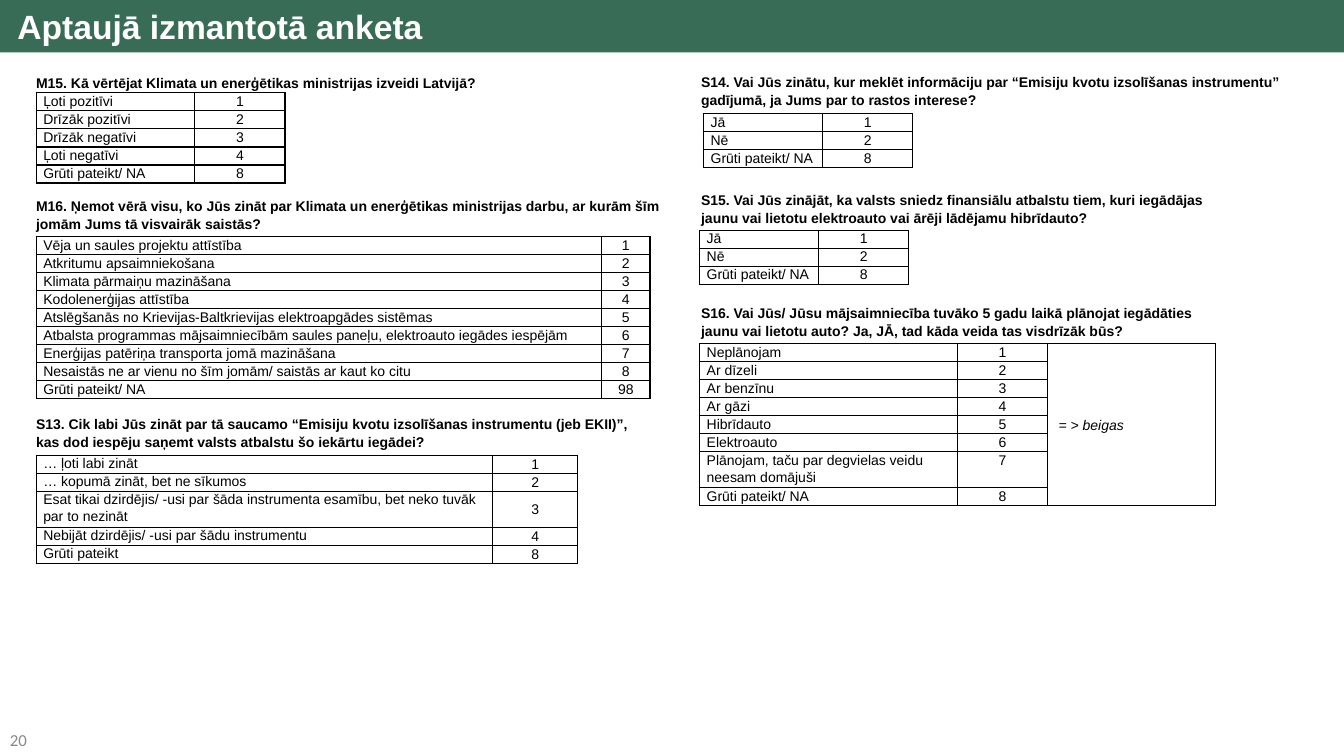
import pptx
import pptx.dml.color
import pptx.enum.shapes
import pptx.enum.text
import pptx.oxml
import pptx.oxml.ns
import pptx.util
from dataclasses import dataclass

Cm = pptx.util.Cm
ALIGN = pptx.enum.text.PP_ALIGN
ANCHOR = pptx.enum.text.MSO_ANCHOR


@dataclass(frozen=True)
class Theme:
    band: str = "386C57"
    white: str = "FFFFFF"
    ink: str = "000000"
    grey: str = "898989"
    title_size: int = 24
    number_size: int = 12
    body_size: int = 10
    font: str = "Arial"
    number_font: str = "Calibri"
    line_spacing: float = 1.07
    border: float = 1
    row_height: float = 0.45
    cell_inset: float = 0.18


THEME = Theme()
HARD_TO_SAY = "Grūti pateikt/ NA"
YES_NO = [("Jā", 1), ("Nē", 2), (HARD_TO_SAY, 8)]

# Each question: text, box (left, top, width), table (left, top), columns, answers
QUESTIONS = [
    dict(text="M15. Kā vērtējat Klimata un enerģētikas ministrijas izveidi Latvijā?",
         box=(0.66, 1.73, 16.97), corner=(0.91, 2.34), columns=(4, 2.27),
         answers=[("Ļoti pozitīvi", 1), ("Drīzāk pozitīvi", 2), ("Drīzāk negatīvi", 3),
                  ("Ļoti negatīvi", 4), (HARD_TO_SAY, 8)]),
    dict(text="M16. Ņemot vērā visu, ko Jūs zināt par Klimata un enerģētikas ministrijas "
              "darbu, ar kurām šīm jomām Jums tā visvairāk saistās?",
         box=(0.66, 4.83, 16.97), corner=(0.91, 5.96), columns=(14.25, 1.22),
         answers=[("Vēja un saules projektu attīstība", 1),
                  ("Atkritumu apsaimniekošana", 2),
                  ("Klimata pārmaiņu mazināšana", 3),
                  ("Kodolenerģijas attīstība", 4),
                  ("Atslēgšanās no Krievijas-Baltkrievijas elektroapgādes sistēmas", 5),
                  ("Atbalsta programmas mājsaimniecībām saules paneļu, "
                   "elektroauto iegādes iespējām", 6),
                  ("Enerģijas patēriņa transporta jomā mazināšana", 7),
                  ("Nesaistās ne ar vienu no šīm jomām/ saistās ar kaut ko citu", 8),
                  (HARD_TO_SAY, 98)]),
    dict(text="S13. Cik labi Jūs zināt par tā saucamo “Emisiju kvotu izsolīšanas instrumentu "
              "(jeb EKII)”, kas dod iespēju saņemt valsts atbalstu šo iekārtu iegādei?",
         box=(0.66, 10.31, 15.75), corner=(0.91, 11.47), columns=(11.5, 2.15),
         answers=[("… ļoti labi zināt", 1),
                  ("… kopumā zināt, bet ne sīkumos", 2),
                  ("Esat tikai dzirdējis/ -usi par šāda instrumenta esamību, "
                   "bet neko tuvāk par to nezināt", 3),
                  ("Nebijāt dzirdējis/ -usi par šādu instrumentu", 4),
                  ("Grūti pateikt", 8)],
         tall_row=2, code_anchor=ANCHOR.MIDDLE),
    dict(text="S14. Vai Jūs zinātu, kur meklēt informāciju par “Emisiju kvotu izsolīšanas "
              "instrumentu” gadījumā, ja Jums par to rastos interese?",
         box=(17.42, 1.7, 15.77), corner=(17.73, 2.86), columns=(3, 2.27), answers=YES_NO),
    dict(text="S15. Vai Jūs zinājāt, ka valsts sniedz finansiālu atbalstu tiem, kuri iegādājas "
              "jaunu vai lietotu elektroauto vai ārēji lādējamu hibrīdauto?",
         box=(17.42, 4.67, 13.84), corner=(17.63, 5.8), columns=(3, 2.27), answers=YES_NO),
    dict(text="S16. Vai Jūs/ Jūsu mājsaimniecība tuvāko 5 gadu laikā plānojat iegādāties "
              "jaunu vai lietotu auto? Ja, JĀ, tad kāda veida tas visdrīzāk būs?",
         box=(17.42, 7.52, 13.84), corner=(17.63, 8.66), columns=(6.5, 2.27, 4.24),
         answers=[("Neplānojam", 1), ("Ar dīzeli", 2), ("Ar benzīnu", 3), ("Ar gāzi", 4),
                  ("Hibrīdauto", 5), ("Elektroauto", 6),
                  ("Plānojam, taču par degvielas veidu neesam domājuši", 7),
                  (HARD_TO_SAY, 8)],
         tall_row=6, note="= > beigas"),
]


def write_text(frame, text, *, size=THEME.body_size, color=THEME.ink, font=THEME.font,
               bold=False, italic=False, align=ALIGN.LEFT, spacing=THEME.line_spacing):
    paragraph = frame.paragraphs[0]
    paragraph.alignment = align
    paragraph.line_spacing = spacing
    run = paragraph.add_run()
    run.text = text
    run.font.name = font
    run.font.size = pptx.util.Pt(size)
    run.font.bold = bold
    run.font.italic = italic
    run.font.color.rgb = pptx.dml.color.RGBColor.from_string(color)


def add_text_box(slide, text, left, top, width, height, anchor=ANCHOR.TOP, **text_format):
    shape = slide.shapes.add_textbox(Cm(left), Cm(top), Cm(width), Cm(height))
    shape.text_frame.word_wrap = True
    shape.text_frame.vertical_anchor = anchor
    write_text(shape.text_frame, text, **text_format)


def add_title_band(slide, text, width):
    band = slide.shapes.add_shape(pptx.enum.shapes.MSO_SHAPE.RECTANGLE,
                                  0, 0, width, Cm(1.32))
    band.shadow.inherit = False
    band.fill.solid()
    band.fill.fore_color.rgb = pptx.dml.color.RGBColor.from_string(THEME.band)
    band.line.fill.background()
    frame = band.text_frame
    frame.word_wrap = True
    frame.vertical_anchor = ANCHOR.MIDDLE
    frame.margin_left = Cm(0.44)
    write_text(frame, text, size=THEME.title_size, color=THEME.white, bold=True, spacing=1)


def style_cell(cell):
    cell.margin_left = cell.margin_right = Cm(THEME.cell_inset)
    cell.margin_top = cell.margin_bottom = 0
    properties = cell._tc.get_or_add_tcPr()
    for side in ("lnL", "lnR", "lnT", "lnB"):
        properties.append(pptx.oxml.parse_xml(
            f'<a:{side} {pptx.oxml.ns.nsdecls("a")} w="{pptx.util.Pt(THEME.border)}">'
            f'<a:solidFill><a:srgbClr val="{THEME.ink}"/></a:solidFill></a:{side}>'))
    cell.fill.background()


def add_answer_table(slide, corner, columns, answers, tall_row=None,
                     code_anchor=ANCHOR.TOP, note=None):
    heights = [THEME.row_height * (2 if row == tall_row else 1) for row in range(len(answers))]
    left, top = corner
    table = slide.shapes.add_table(len(answers), len(columns), Cm(left), Cm(top),
                                   Cm(sum(columns)), Cm(sum(heights))).table
    table.first_row = table.horz_banding = False
    for column, width in zip(table.columns, columns):
        column.width = Cm(width)
    for row, height in zip(table.rows, heights):
        row.height = Cm(height)
    for cell in table.iter_cells():
        style_cell(cell)

    for row, (label, code) in enumerate(answers):
        write_text(table.cell(row, 0).text_frame, label)
        code_cell = table.cell(row, 1)
        code_cell.vertical_anchor = code_anchor
        write_text(code_cell.text_frame, str(code), align=ALIGN.CENTER)

    # Routing note spans all answers
    if note:
        note_cell = table.cell(0, 2)
        note_cell.merge(table.cell(len(answers) - 1, 2))
        note_cell.vertical_anchor = ANCHOR.MIDDLE
        note_cell.margin_left = Cm(0.28)
        write_text(note_cell.text_frame, note, italic=True)


def add_question(slide, text, box, **table_options):
    add_text_box(slide, text, *box, 1.14, bold=True)
    add_answer_table(slide, **table_options)


def main():
    presentation = pptx.Presentation()
    presentation.slide_width = Cm(33.87)
    presentation.slide_height = Cm(19.05)
    slide = presentation.slides.add_slide(presentation.slide_layouts[6])

    # Page frame
    add_text_box(slide, "20", 0, 18.26, 3.76, 0.79, anchor=ANCHOR.MIDDLE,
                 size=THEME.number_size, color=THEME.grey, font=THEME.number_font, spacing=1)
    add_title_band(slide, "Aptaujā izmantotā anketa", presentation.slide_width)

    # Questionnaire
    for question in QUESTIONS:
        add_question(slide, **question)

    presentation.save("out.pptx")


if __name__ == "__main__":
    main()
